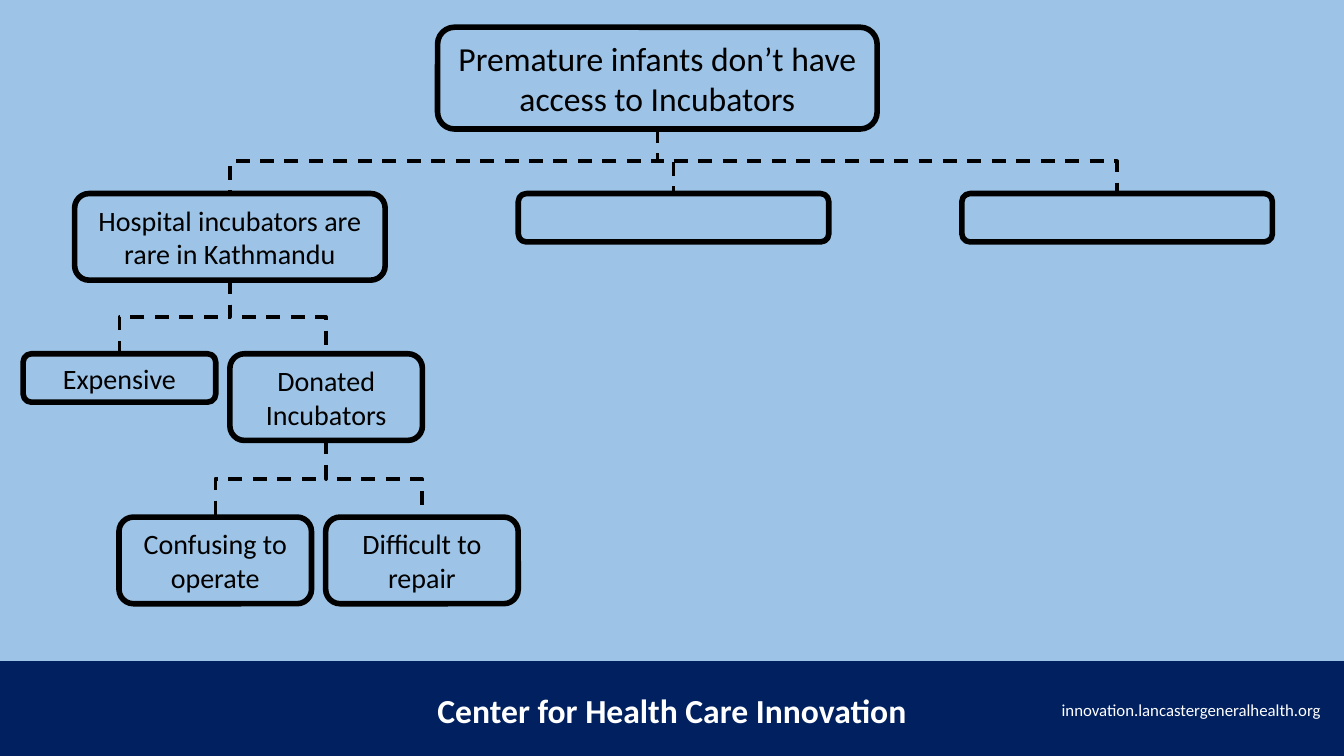
from pptx import Presentation
from pptx.dml.color import RGBColor
from pptx.enum.dml import MSO_LINE
from pptx.enum.shapes import MSO_CONNECTOR, MSO_SHAPE
from pptx.enum.text import MSO_ANCHOR, PP_ALIGN
from pptx.oxml.ns import qn
from pptx.util import Inches, Pt

COLORS = {"sky": "9DC3E6", "navy": "002060", "ink": "000000", "white": "FFFFFF"}
BOTTOM, TOP = 2, 0
BRANCH_PITCH = 4.4
CAUSE_PITCH = 2.05


def rgb(name):
    return RGBColor.from_string(COLORS[name])


def write(sp, text, align, size, color, bold=False):
    tf = sp.text_frame
    tf.word_wrap = True
    tf.vertical_anchor = MSO_ANCHOR.MIDDLE
    p = tf.paragraphs[0]
    p.alignment = align
    r = p.add_run()
    r.text = text
    style = {"name": "Calibri", "size": Pt(size), "bold": bold}
    for key, value in style.items():
        setattr(r.font, key, value)
    r.font.color.rgb = rgb(color)


def add_footer(s, x, y, w, h):
    bar = s.shapes.add_shape(MSO_SHAPE.RECTANGLE, *map(Inches, (x, y, w, h)))
    bar.shadow.inherit = False
    bar.fill.solid()
    bar.fill.fore_color.rgb = rgb("navy")
    bar.line.fill.background()
    labels = [
        ((4.15, 0.23, 5.03, 0.5), "Center for Health Care Innovation",
         PP_ALIGN.CENTER, 24, True),
        ((9.53, 0.33, 3.67, 0.3), "innovation.lancastergeneralhealth.org",
         PP_ALIGN.RIGHT, 12, False),
    ]
    for (dx, dy, lw, lh), text, align, size, bold in labels:
        tb = s.shapes.add_textbox(*map(Inches, (x + dx, y + dy, lw, lh)))
        write(tb, text, align, size, "white", bold)


def add_box(s, x, y, w, h, text="", size=20):
    sp = s.shapes.add_shape(MSO_SHAPE.ROUNDED_RECTANGLE, *map(Inches, (x, y, w, h)))
    sp.shadow.inherit = False
    sp.fill.background()
    sp.line.color.rgb = rgb("ink")
    sp.line.width = Pt(4)
    if text:
        write(sp, text, PP_ALIGN.CENTER, size, "ink")
    return sp


def add_link(s, parent, child):
    x1, y1 = parent.left + parent.width // 2, parent.top + parent.height
    x2, y2 = child.left + child.width // 2, child.top
    cxn = s.shapes.add_connector(MSO_CONNECTOR.ELBOW, x1, y1, x2, y2)
    cxn.begin_connect(parent, BOTTOM)
    cxn.end_connect(child, TOP)
    drop, run = y2 - y1, abs(x2 - x1)
    frame = {"left": (x1 + x2 - drop) // 2, "top": (y1 + y2 - run) // 2,
             "width": drop, "height": run}
    for key, value in frame.items():
        setattr(cxn, key, value)
    rightward = x2 > x1
    xfrm = cxn._element.spPr.find(qn("a:xfrm"))
    turn = {"rot": "16200000" if rightward else "5400000",
            "flipH": "1" if rightward else "0", "flipV": "0"}
    for key, value in turn.items():
        xfrm.set(key, value)
    cxn.line.color.rgb = rgb("ink")
    cxn.line.width = Pt(2.5)
    cxn.line.dash_style = MSO_LINE.DASH
    spPr = cxn._element.spPr
    spPr.append(spPr.makeelement(qn("a:effectLst"), {}))


def add_row(s, parent, x, y, w, pitch, items):
    boxes = []
    for i, (text, h) in enumerate(items):
        box = add_box(s, x + i * pitch, y, w, h, text)
        add_link(s, parent, box)
        boxes.append(box)
    return boxes


def add_problem_tree(s, x, y):
    root = add_box(s, x + 4.11, y, 4.36, 1.01,
                   "Premature infants don’t have access to Incubators", 24)
    branches = add_row(s, root, x + 0.51, y + 1.65, 3.08, BRANCH_PITCH, [
        ("Hospital incubators are rare in Kathmandu", 0.86), ("", 0.48), ("", 0.48)])
    causes = add_row(s, branches[0], x, y + 3.24, 1.91, CAUSE_PITCH, [
        ("Expensive", 0.48), ("Donated Incubators", 0.86)])
    add_row(s, causes[1], x + 0.95, y + 4.86, 1.91, CAUSE_PITCH, [
        ("Confusing to operate", 0.86), ("Difficult to repair", 0.86)])


def main():
    prs = Presentation()
    prs.slide_width, prs.slide_height = Inches(13.33), Inches(7.5)
    s = prs.slides.add_slide(prs.slide_layouts[6])
    s.background.fill.solid()
    s.background.fill.fore_color.rgb = rgb("sky")
    add_footer(s, 0, 6.56, 13.33, 0.94)
    add_problem_tree(s, 0.23, 0.27)
    prs.save("out.pptx")


if __name__ == "__main__":
    main()
